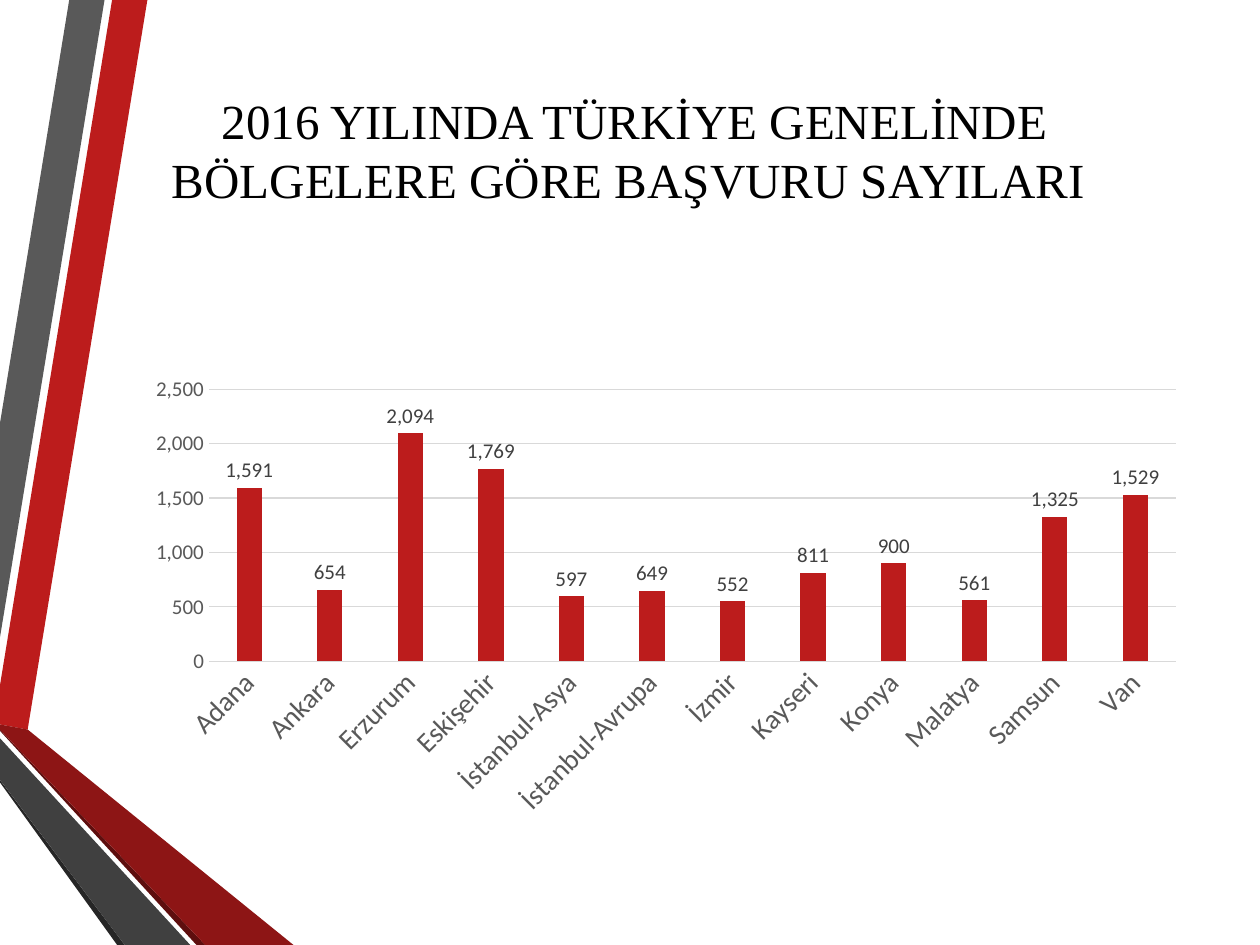
import pptx
import pptx.chart.data
import pptx.dml.color
import pptx.enum.chart
import pptx.enum.text
import pptx.util

RGBColor = pptx.dml.color.RGBColor
RED = RGBColor(0xBC, 0x1C, 0x1C)
DARK_RED = RGBColor(0x8D, 0x15, 0x15)
DEEP_RED = RGBColor(0x5E, 0x0E, 0x0E)
GRAY = RGBColor(0x59, 0x59, 0x59)
DARK_GRAY = RGBColor(0x40, 0x40, 0x40)
DEEP_GRAY = RGBColor(0x26, 0x26, 0x26)
LIGHT_GRAY = RGBColor(0xD9, 0xD9, 0xD9)
BLACK = RGBColor(0, 0, 0)


def format_font(font, name="Calibri", size=12, color=GRAY):
    font.name = name
    font.size = pptx.util.Pt(size)
    font.bold = False
    font.color.rgb = color


def write_text(frame, text, alignment=pptx.enum.text.PP_ALIGN.CENTER, **font_format):
    frame.word_wrap = True
    frame.auto_size = pptx.enum.text.MSO_AUTO_SIZE.NONE
    frame.vertical_anchor = pptx.enum.text.MSO_ANCHOR.MIDDLE
    paragraph = frame.paragraphs[0]
    paragraph.alignment = alignment
    run = paragraph.add_run()
    run.text = text
    format_font(run.font, **font_format)


presentation = pptx.Presentation()
presentation.slide_width = pptx.util.Inches(10)
presentation.slide_height = pptx.util.Inches(7.5)
width, height = presentation.slide_width, presentation.slide_height
slide = presentation.slides.add_slide(presentation.slide_layouts[5])

# Corner points are in thousandths of the slide's width.
bands = [
    (RED, [(0, 544), (0, 575), (22, 579), (117, 0), (89, 0)]),
    (GRAY, [(83, 0), (55, 0), (0, 336), (0, 506)]),
    (DEEP_GRAY, [(0, 619), (0, 621), (93, 750), (99, 750)]),
    (DEEP_RED, [(0, 579), (0, 580), (156, 750), (163, 750)]),
    (DARK_RED, [(0, 579), (163, 750), (233, 750), (22, 579), (0, 575)]),
    (DARK_GRAY, [(0, 619), (99, 750), (151, 750), (0, 586)]),
]
for color, corners in bands:
    builder = slide.shapes.build_freeform(*corners[0], scale=width / 1000)
    builder.add_line_segments(corners[1:], close=True)
    band = builder.convert_to_shape()
    band.shadow.inherit = False
    band.fill.solid()
    band.fill.fore_color.rgb = color
    band.line.fill.background()

title = slide.shapes.title
title.left, title.top = int(width * 0.05), int(height * 0.048)
title.width, title.height = int(width * 0.907), int(height * 0.221)
write_text(title.text_frame,
           "2016 YILINDA TÜRKİYE GENELİNDE BÖLGELERE GÖRE BAŞVURU SAYILARI ",
           name="Times New Roman", size=28, color=BLACK)

applications = {
    "Adana": 1591, "Ankara": 654, "Erzurum": 2094, "Eskişehir": 1769,
    "İstanbul-Asya": 597, "İstanbul-Avrupa": 649, "İzmir": 552, "Kayseri": 811,
    "Konya": 900, "Malatya": 561, "Samsun": 1325, "Van": 1529,
}
chart_data = pptx.chart.data.CategoryChartData(number_format="#,##0")
chart_data.categories = list(applications)
chart_data.add_series("Series 1", list(applications.values()))
chart = slide.shapes.add_chart(
    pptx.enum.chart.XL_CHART_TYPE.COLUMN_CLUSTERED,
    int(width * 0.107), int(height * 0.389), int(width * 0.843), int(height * 0.485),
    chart_data).chart
chart.has_legend = False
chart.has_title = False
format_font(chart.font, size=10, color=BLACK)

plot = chart.plots[0]
plot.vary_by_categories = False
plot.gap_width = 219
plot.overlap = -27
series = plot.series[0]
series.format.fill.solid()
series.format.fill.fore_color.rgb = RED
labels = series.data_labels
labels.show_value = True
labels.position = pptx.enum.chart.XL_LABEL_POSITION.OUTSIDE_END
labels.number_format = "#,##0"
labels.number_format_is_linked = False
format_font(labels.font, color=DARK_GRAY)

category_axis, value_axis = chart.category_axis, chart.value_axis
for axis, size in ((category_axis, 16), (value_axis, 12)):
    axis.major_tick_mark = pptx.enum.chart.XL_TICK_MARK.NONE
    axis.minor_tick_mark = pptx.enum.chart.XL_TICK_MARK.NONE
    format_font(axis.tick_labels.font, size=size)
category_axis.has_major_gridlines = False
category_axis._element.txPr.bodyPr.set("rot", "-2700000")
value_axis.has_major_gridlines = True
value_axis.minimum_scale = 0
value_axis.maximum_scale = 2500
value_axis.major_unit = 500
value_axis.tick_labels.number_format = "#,##0"
value_axis.tick_labels.number_format_is_linked = False
value_axis.format.line.fill.background()
for line in (category_axis.format.line, value_axis.major_gridlines.format.line):
    line.color.rgb = LIGHT_GRAY
    line.width = pptx.util.Pt(0.75)

presentation.save("out.pptx")
